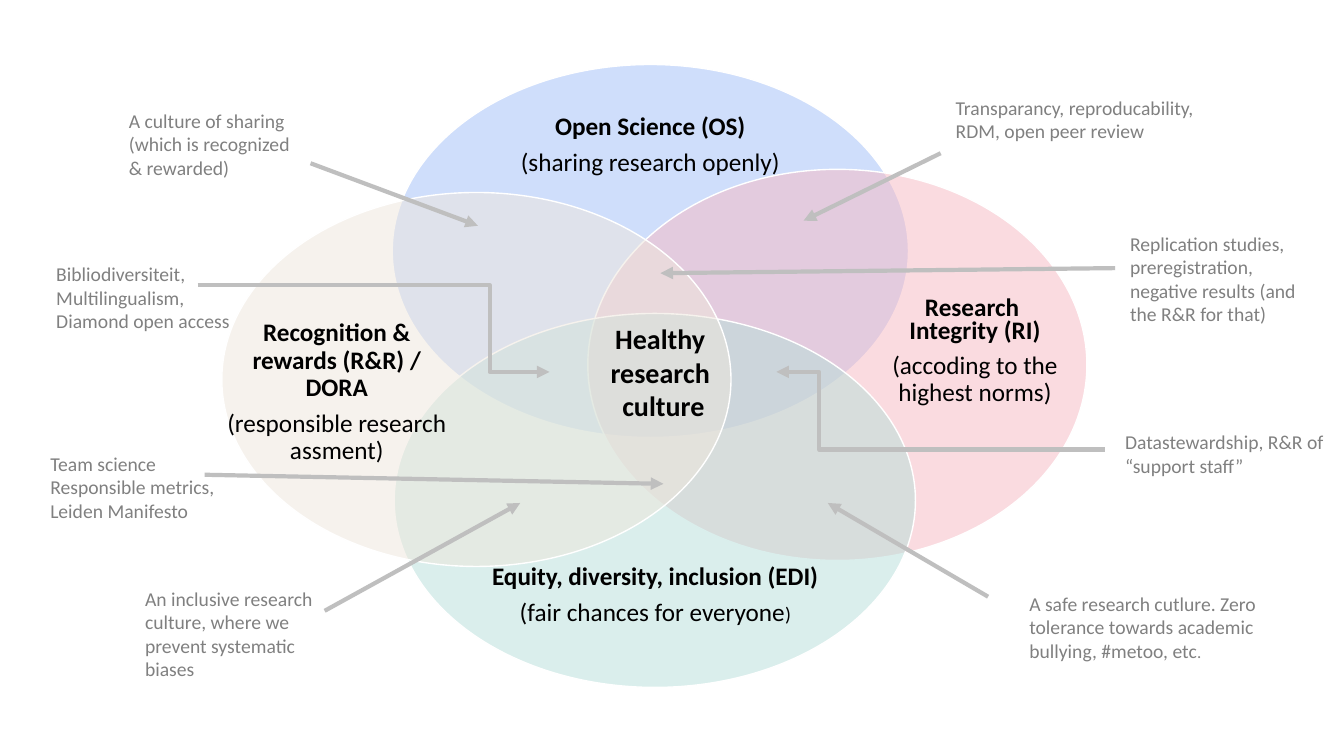
import pptx
import pptx.dml.color
import pptx.enum.shapes
import pptx.enum.text
import pptx.oxml
import pptx.oxml.ns
import pptx.util
from pptx.dml.color import RGBColor
from pptx.enum.shapes import MSO_CONNECTOR, MSO_SHAPE
from pptx.enum.text import MSO_ANCHOR, PP_ALIGN
from pptx.util import Inches

BLACK = RGBColor(0x00, 0x00, 0x00)
WHITE = RGBColor(0xFF, 0xFF, 0xFF)
NOTE_GREY = RGBColor(0x80, 0x80, 0x80)
ARROW_GREY = RGBColor(0xBF, 0xBF, 0xBF)
BLUE = RGBColor(0xA1, 0xBE, 0xF9)
PINK = RGBColor(0xF7, 0xB9, 0xC2)
TEAL = RGBColor(0xB6, 0xDF, 0xDA)
SAND = RGBColor(0xEF, 0xE7, 0xDC)

presentation = pptx.Presentation()
presentation.slide_width = Inches(13.33)
presentation.slide_height = Inches(7.5)
slide = presentation.slides.add_slide(presentation.slide_layouts[6])


def add_text(bounds, lines, size=14, color=NOTE_GREY, bold_count=0, align=PP_ALIGN.LEFT,
             anchor=MSO_ANCHOR.TOP, inset=None, spacing=None, bold_spacing=None,
             gap=0, last_size=None, wrap=True):
    """Add a text box; the first bold_count lines are bold, last_size sets the final character."""
    frame = slide.shapes.add_textbox(*map(Inches, bounds)).text_frame
    frame.word_wrap = wrap
    frame.vertical_anchor = anchor
    if inset is not None:
        frame.margin_left = frame.margin_right = Inches(inset)
        frame.margin_top = frame.margin_bottom = Inches(inset)
    for index, line in enumerate(lines):
        paragraph = frame.paragraphs[0] if index == 0 else frame.add_paragraph()
        bold = index < bold_count
        paragraph.alignment = align
        paragraph.line_spacing = bold_spacing if bold and bold_spacing else spacing
        if index:
            paragraph.space_before = pptx.util.Pt(gap)
        parts = [(line, size)]
        if last_size and index == len(lines) - 1:
            parts = [(line[:-1], size), (line[-1], last_size)]
        for text, points in parts:
            run = paragraph.add_run()
            run.text = text
            run.font.name = "Calibri"
            run.font.size = pptx.util.Pt(points)
            run.font.bold = bold
            run.font.color.rgb = color


# Four overlapping themes: ellipse, colour, label box, label lines, label format
themes = [
    ((3.89, 0.64, 5.12, 3.7), BLUE, (4.48, 1.04, 3.94, 0.8),
     ["Open Science (OS)", "(sharing research openly)"], {"bold_count": 1}),
    ((5.83, 1.68, 4.95, 3.88), PINK, (8.52, 2.05, 2.3, 2.99),
     ["Research ", "Integrity (RI)", "(accoding to the highest norms)"],
     {"bold_count": 2, "bold_spacing": pptx.util.Pt(10)}),
    ((3.91, 3.11, 5.17, 3.71), TEAL, (4.51, 5.51, 3.98, 0.8),
     ["Equity, diversity, inclusion (EDI)", "(fair chances for everyone)"],
     {"bold_count": 1, "last_size": 14}),
    ((2.2, 1.91, 5.05, 3.71), SAND, (2.25, 2.47, 2.18, 2.85),
     ["Recognition & rewards (R&R) / DORA", "(responsible research assment)"],
     {"bold_count": 1}),
]
for ellipse_bounds, color, label_bounds, lines, label_format in themes:
    ellipse = slide.shapes.add_shape(MSO_SHAPE.OVAL, *map(Inches, ellipse_bounds))
    ellipse.shadow.inherit = False
    ellipse.fill.solid()
    ellipse.fill.fore_color.rgb = color
    fill_color = ellipse.fill._xPr.find(".//" + pptx.oxml.ns.qn("a:srgbClr"))
    alpha = pptx.oxml.parse_xml("<a:alpha %s val='50000'/>" % pptx.oxml.ns.nsdecls("a"))
    fill_color.append(alpha)
    ellipse.line.color.rgb = WHITE
    ellipse.line.width = pptx.util.Pt(1)
    add_text(label_bounds, lines, size=18, color=BLACK, align=PP_ALIGN.CENTER,
             anchor=MSO_ANCHOR.MIDDLE, inset=0, spacing=0.9, gap=6.3, **label_format)

# Notes around the themes
notes = [
    ((1.18, 1.03, 1.87, 0.81),
     ["A culture of sharing", "(which is recognized", "& rewarded)"], None),
    ((1.34, 5.77, 2.04, 1.04),
     ["An inclusive research culture, where we prevent systematic biases"], None),
    ((9.38, 0.9, 2.76, 0.57),
     ["Transparancy, reproducability,", "RDM, open peer review"], None),
    ((10.11, 5.82, 2.85, 0.81),
     ["A safe research cutlure. Zero tolerance towards academic bullying, #metoo, etc."], 12),
    ((11.11, 2.25, 2.07, 1.04),
     ["Replication studies, preregistration, negative results (and the R&R for that)"], None),
    ((0.46, 2.55, 2.1, 0.81),
     ["Bibliodiversiteit, Multilingualism, Diamond open access"], None),
    ((11.06, 4.22, 2.65, 0.57),
     ["Datastewardship, R&R of “support staff”"], None),
    ((0.4, 4.43, 2.19, 0.81),
     ["Team science Responsible metrics,", "Leiden Manifesto"], None),
]
for bounds, lines, last_size in notes:
    add_text(bounds, lines, last_size=last_size)

add_text((5.95, 3.14, 1.26, 1.11), ["Healthy ", "research ", "culture"], size=20,
         color=BLACK, bold_count=3, align=PP_ALIGN.CENTER, wrap=False)

# Arrows from notes to overlaps; the last value is the bend position of an elbow
arrows = [
    ((3.22, 6.06), (5.16, 4.99), None),
    ((9.33, 1.52), (7.97, 2.19), None),
    ((11.06, 2.66), (6.55, 2.71), None),
    ((2.03, 4.71), (6.58, 4.8), None),
    ((10.96, 4.46), (7.7, 3.69), 0.87),
    ((1.96, 2.83), (5.45, 3.69), 0.83),
    ((9.8, 5.92), (8.21, 4.99), None),
    ((3.08, 1.62), (4.74, 2.24), None),
]
for start, end, bend in arrows:
    kind = MSO_CONNECTOR.ELBOW if bend else MSO_CONNECTOR.STRAIGHT
    arrow = slide.shapes.add_connector(kind, *map(Inches, start + end))
    arrow.line.color.rgb = ARROW_GREY
    arrow.line.width = pptx.util.Pt(3)
    namespace = pptx.oxml.ns.nsdecls("a")
    properties = arrow._element.spPr
    arrow.line._get_or_add_ln().append(
        pptx.oxml.parse_xml("<a:tailEnd %s type='triangle'/>" % namespace))
    properties.append(pptx.oxml.parse_xml("<a:effectLst %s/>" % namespace))
    if bend:
        guide = "<a:gd %s name='adj1' fmla='val %d'/>" % (namespace, round(bend * 100000))
        adjustments = properties.find(".//" + pptx.oxml.ns.qn("a:avLst"))
        adjustments.append(pptx.oxml.parse_xml(guide))

presentation.save("out.pptx")
